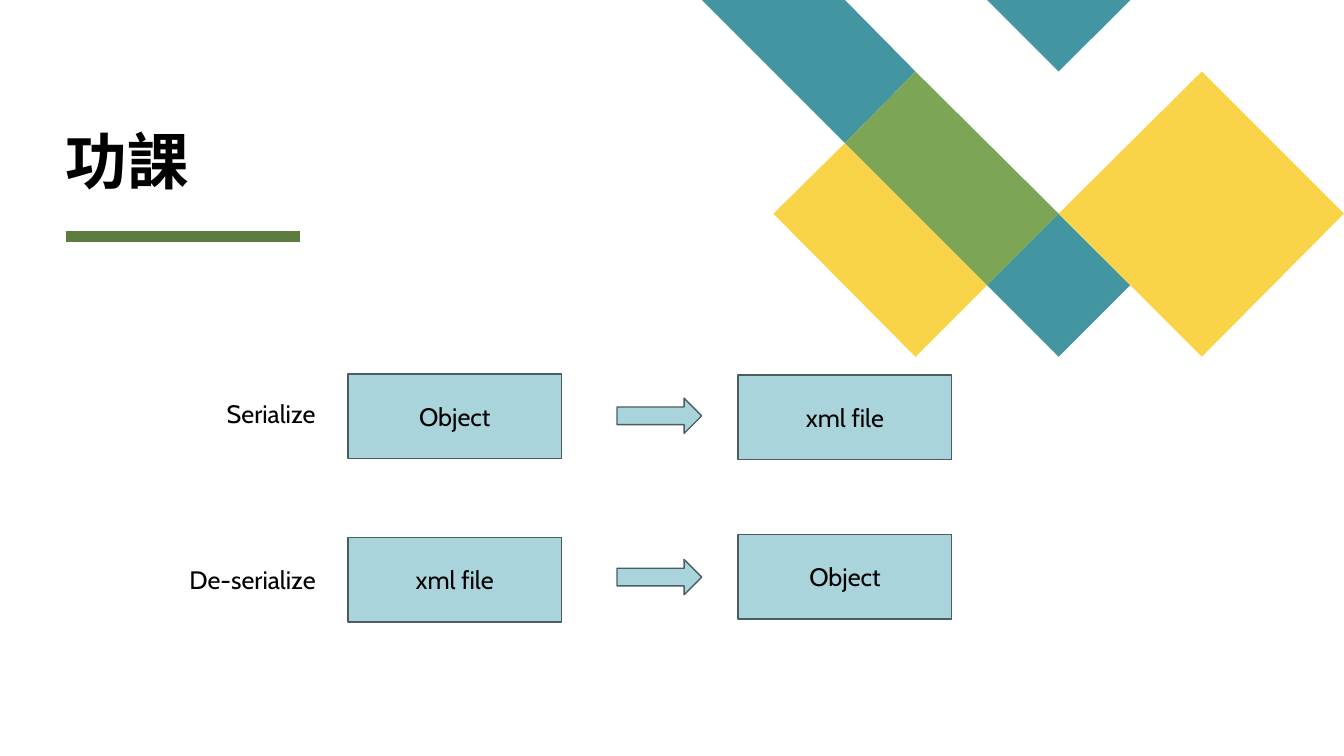
from pptx import Presentation
from pptx.dml.color import RGBColor
from pptx.enum.shapes import MSO_CONNECTOR as Connector, MSO_SHAPE as Preset
from pptx.enum.text import MSO_ANCHOR as Anchor, MSO_AUTO_SIZE as AutoSize, PP_ALIGN as Align
from pptx.oxml.ns import qn
from pptx.util import Emu, Pt

PX = 9144
LATTICE_STEP = 70.8
BLACK, TEAL, YELLOW, GREEN = "000000", "4495A2", "F9D448", "7CA655"
DARK_GREEN, PALE_BLUE, SLATE = "5D7D40", "A9D4DB", "4A5D60"

DIAMONDS = [
    (TEAL, [[(3, 1), (2, 0), (0, 0), (2, 2)], [(6, 4), (5, 3), (4, 4), (5, 5)]]),
    (YELLOW, [[(2, 2), (1, 3), (3, 5), (4, 4)]]),
    (TEAL, [[(6, 0), (4, 0), (5, 1)]]),
    (GREEN, [[(3, 1), (2, 2), (4, 4), (5, 3)]]),
    (YELLOW, [[(9, 3), (7, 1), (5, 3), (7, 5)]]),
]


def px(*lengths):
    return [Emu(length * PX) for length in lengths]


def color(hex_code):
    return RGBColor.from_string(hex_code)


def paint(shape, fill, outline=None):
    shape.shadow.inherit = False
    shape.fill.solid()
    shape.fill.fore_color.rgb = color(fill)
    if outline:
        shape.line.color.rgb = color(outline)
        shape.line.width = Pt(1)
    else:
        shape.line.fill.background()


def write(shape, text, font_name, size, align):
    paragraph = shape.text_frame.paragraphs[0]
    paragraph.text = text
    paragraph.alignment = align
    font = paragraph.runs[0].font
    font.name, font.size = font_name, Pt(size)
    font.color.rgb = color(BLACK)
    return paragraph


def add_diamonds(slide, left, top):
    def lattice(point):
        column, row = point
        return left + round(column * LATTICE_STEP), top + round(row * LATTICE_STEP)

    for fill, outlines in DIAMONDS:
        first = lattice(outlines[0][0])
        builder = slide.shapes.build_freeform(*first, scale=PX)
        for index, outline in enumerate(outlines):
            start, *corners = map(lattice, outline)
            if index:
                builder.move_to(*start)
            builder.add_line_segments(corners, close=True)
        paint(builder.convert_to_shape(), fill)


def add_heading(slide, text, left, top, width, height):
    underline = slide.shapes.add_connector(
        Connector.STRAIGHT, *px(left, top + height + 40, left + 233, top + height + 40))
    underline.line.color.rgb = color(DARK_GREEN)
    underline.line.width = Pt(8)
    properties = underline._element.spPr
    properties.append(properties.makeelement(qn("a:effectLst"), {}))

    title = slide.shapes.title
    title.left, title.top, title.width, title.height = px(left, top, width, height)
    frame = title.text_frame
    frame.margin_left = frame.margin_top = frame.margin_right = frame.margin_bottom = 0
    frame.vertical_anchor = Anchor.BOTTOM
    frame.auto_size = AutoSize.NONE
    frame.word_wrap = True
    paragraph = write(title, text, "Karla", 44, Align.LEFT)
    paragraph.line_spacing = 0.8
    run = paragraph.runs[0]
    run.font.bold = True
    run.font._element.set("spc", "50")


def add_conversion(slide, label, source, target, label_box, source_top, target_top, arrow_top):
    caption = slide.shapes.add_textbox(*px(*label_box))
    caption.text_frame.word_wrap = True
    write(caption, label, "Cabin", 18, Align.LEFT)

    for text, left, top in ((source, 345, source_top), (target, 732, target_top)):
        block = slide.shapes.add_shape(Preset.RECTANGLE, *px(left, top, 212, 84))
        paint(block, PALE_BLUE, SLATE)
        block.text_frame.vertical_anchor = Anchor.MIDDLE
        write(block, text, "Cabin", 18, Align.CENTER)

    arrow = slide.shapes.add_shape(Preset.RIGHT_ARROW, *px(612, arrow_top, 84, 35))
    paint(arrow, PALE_BLUE, SLATE)


def main():
    deck = Presentation()
    deck.slide_width, deck.slide_height = px(1333, 750)
    slide = deck.slides.add_slide(deck.slide_layouts[5])
    add_diamonds(slide, 696, 0)
    add_heading(slide, "功課", 65, 21, 742, 174)
    add_conversion(slide, "Serialize", "Object", "xml file", (215, 390, 113, 40), 371, 372, 395)
    add_conversion(slide, "De-serialize", "xml file", "Object", (178, 555, 149, 40), 533, 530, 555)
    deck.save("out.pptx")


if __name__ == "__main__":
    main()
